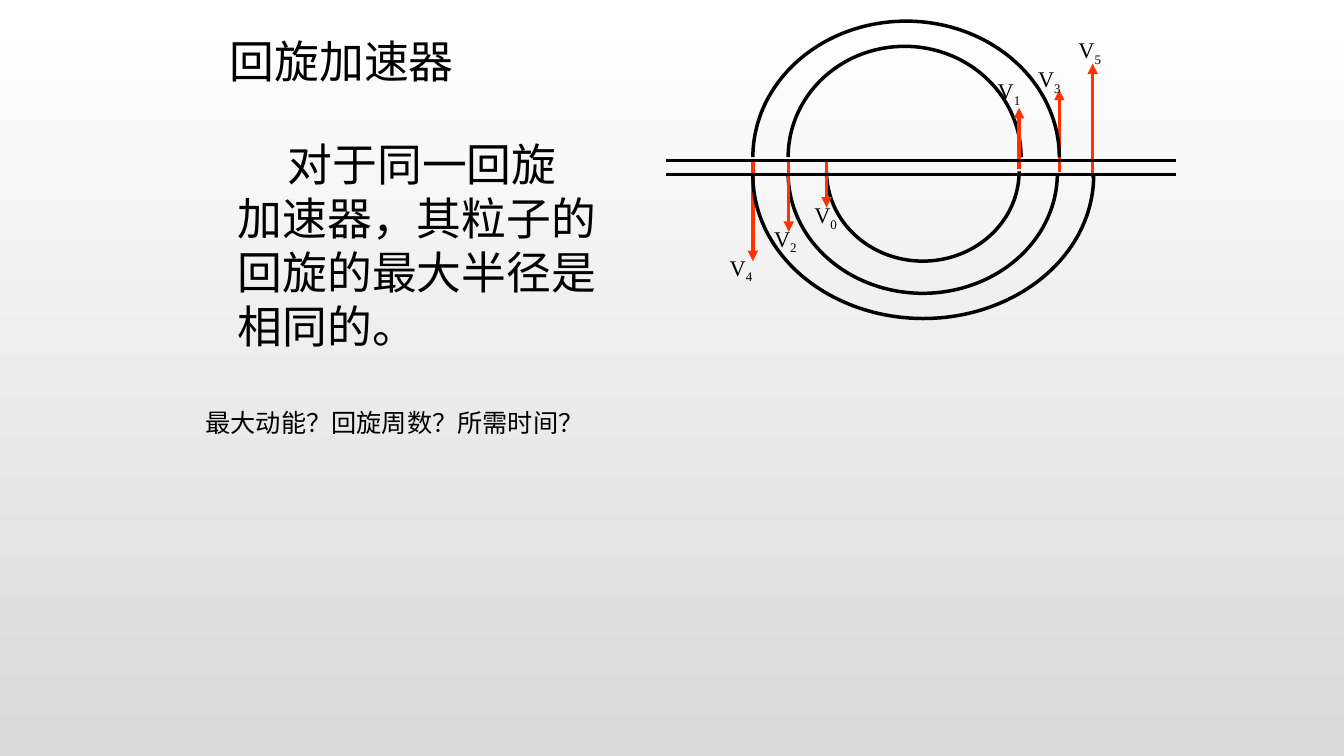
from lxml import etree
from pptx import Presentation
from pptx.dml.color import RGBColor
from pptx.enum.shapes import MSO_CONNECTOR, MSO_SHAPE
from pptx.enum.text import MSO_ANCHOR, PP_ALIGN
from pptx.oxml.ns import qn
from pptx.util import Pt

ARC = MSO_SHAPE.ARC
STRAIGHT = MSO_CONNECTOR.STRAIGHT
TOP = MSO_ANCHOR.TOP
LEFT, JUSTIFY = PP_ALIGN.LEFT, PP_ALIGN.JUSTIFY

COLORS = {"ink": "000000", "speed": "FF3300", "top": "FFFFFF", "base": "D9D9D9"}
STROKE = 2.5
HALF_TURN = 108  # 180 degrees in the units of an arc adjustment
SANS, SERIF, CJK = "Arial", "Times New Roman", "Noto Sans CJK SC"

# left, right, middle height, vertical radius (negative for an upper half)
INNER_ARCS = [
    (563, 755.3, 123.8, 85.7),
    (563, 729.4, 112.3, -79.2),
    (590.4, 728, 122.4, 64.1),
]
OUTER_ARCS = [
    (537.8, 756.7, 112.3, -97.2),
    (537.8, 781.2, 125.3, 102.2),
]
# arrow x, start y, end y, then label left and top, for V0 to V5
SPEEDS = [
    (590.4, 115.2, 148.3, 574.6, 140.4),
    (727.9, 121, 77, 705.6, 51.8),
    (563.4, 115.2, 165.6, 545.8, 157),
    (756.7, 123.1, 64.1, 734.4, 43.2),
    (537.8, 115.2, 186.5, 514.1, 177.8),
    (780.5, 127.4, 45.4, 763.2, 22.3),
]
RAILS = [114.5, 124.6]


def color(name):
    return RGBColor.from_string(COLORS[name])


def paint(slide):
    fill = slide.background.fill
    fill.gradient()
    fill.gradient_angle = 270
    for stop, name, place in zip(fill.gradient_stops, ("top", "base"), (0, 1)):
        stop.color.rgb = color(name)
        stop.position = place


def add_run(para, text, size, font, base=0):
    run = para.add_run()
    run.text = text
    run.font.size = Pt(size)
    run.font.name = font
    run.font.color.rgb = color("ink")
    props = run.font._element
    etree.SubElement(props, qn("a:ea")).set("typeface", font)
    if base:
        props.set("baseline", str(base * 1000))


def add_text(shapes, box, runs, align=LEFT, indent=0):
    """Each run is (text, size, font) with an optional baseline shift."""
    frame = shapes.add_textbox(*map(Pt, box)).text_frame
    frame.word_wrap = True
    frame.vertical_anchor = TOP
    para = frame.paragraphs[0]
    para.alignment = align
    if indent:
        para._p.get_or_add_pPr().set("indent", str(Pt(indent)))
    for run in runs:
        add_run(para, *run)


def add_line(shapes, start, end, name, arrow=False):
    link = shapes.add_connector(STRAIGHT, *map(Pt, start + end))
    link.line.color.rgb = color(name)
    link.line.width = Pt(STROKE)
    if arrow:
        line = link.line._get_or_add_ln()
        etree.SubElement(line, qn("a:tailEnd")).set("type", "triangle")
    etree.SubElement(link._element.spPr, qn("a:effectLst"))


def add_arc(shapes, left, right, mid, radius):
    high = abs(radius)
    box = (left, mid - high, right - left, 2 * high)
    arc = shapes.add_shape(ARC, *map(Pt, box))
    upper = radius < 0
    arc.adjustments[0] = HALF_TURN if upper else 0
    arc.adjustments[1] = 0 if upper else HALF_TURN
    arc.shadow.inherit = False
    arc.fill.background()
    arc.line.color.rgb = color("ink")
    arc.line.width = Pt(STROKE)


def draw_paths(shapes):
    for arc in INNER_ARCS:
        add_arc(shapes, *arc)
    for x, start, end, *_ in SPEEDS:
        add_line(shapes, (x, start), (x, end), "speed", arrow=True)
    for arc in OUTER_ARCS:
        add_arc(shapes, *arc)
    for order, (*_, left, top) in enumerate(SPEEDS):
        runs = [("V", 16, SERIF), (str(order), 16, SERIF, -25)]
        add_text(shapes, (left, top, 43.2, 33.8), runs, JUSTIFY)
    for y in RAILS:
        add_line(shapes, (475.9, y), (840.2, y), "ink")


def main():
    deck = Presentation()
    deck.slide_width, deck.slide_height = Pt(960), Pt(540)
    slide = deck.slides.add_slide(deck.slide_layouts[6])
    paint(slide)
    shapes = slide.shapes
    add_text(shapes, (157, 20.2, 323.3, 46.1), [("回旋加速器", 32, SANS)])
    draw_paths(shapes.add_group_shape().shapes)
    rule = "对于同一回旋加速器，其粒子的回旋的最大半径是相同的。"
    add_text(shapes, (162.7, 94.3, 272.2, 162), [(rule, 32, SANS)], indent=35.7)
    ask = "最大动能？回旋周数？所需时间？"
    add_text(shapes, (139.7, 287.3, 671.8, 28.8), [(ask, 18, CJK)])
    deck.save("out.pptx")


if __name__ == "__main__":
    main()
